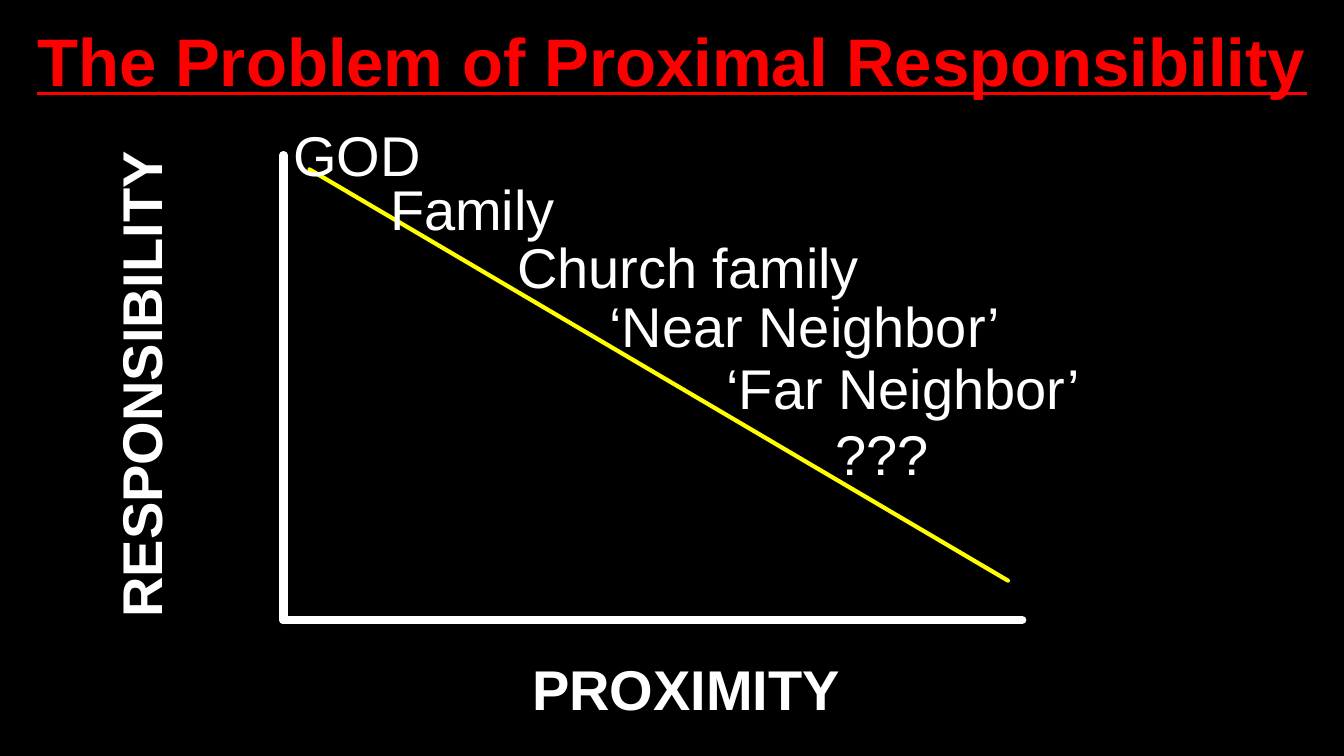
from dataclasses import dataclass

from lxml import etree
from pptx import Presentation
from pptx.dml.color import RGBColor
from pptx.enum.shapes import MSO_CONNECTOR
from pptx.enum.text import MSO_AUTO_SIZE, PP_ALIGN
from pptx.oxml.ns import qn
from pptx.slide import Slide
from pptx.util import Cm, Pt

STRAIGHT = MSO_CONNECTOR.STRAIGHT
GROW = MSO_AUTO_SIZE.SHAPE_TO_FIT_TEXT
LEFT = PP_ALIGN.LEFT
CENTER = PP_ALIGN.CENTER

BLACK = RGBColor(0, 0, 0)
WHITE = RGBColor(255, 255, 255)
RED = RGBColor(255, 0, 0)
YELLOW = RGBColor(255, 255, 0)

WIDTH, HEIGHT = 33.87, 19.05
AXIS_X, AXIS_Y = 7.14, 15.62


@dataclass
class Label:
    text: str
    left: float
    top: float
    width: float
    height: float = 1.96
    size: int = 40
    color: RGBColor = WHITE
    bold: bool = False
    under: bool = False
    align: PP_ALIGN = LEFT
    turn: int = 0


@dataclass
class Line:
    x1: float
    y1: float
    x2: float
    y2: float
    color: RGBColor = WHITE
    weight: int = 6


LINES = [
    Line(AXIS_X, 3.91, AXIS_X, AXIS_Y),
    Line(25.76, AXIS_Y, AXIS_X, AXIS_Y),
    Line(7.8, 4.27, 25.4, 14.63, YELLOW, 3),
]

LABELS = [
    Label("The Problem of Proximal Responsibility", 0, 0.36, WIDTH, 2.31,
          size=48, color=RED, bold=True, under=True, align=CENTER),
    Label("RESPONSIBILITY", -2.77, 8.53, 12.6, bold=True, turn=270),
    Label("PROXIMITY", 13.16, 16.36, 12.6, bold=True),
    Label("GOD", AXIS_X, 2.92, 4.17),
    Label("Family", 9.58, 4.27, 4.7),
    Label("Church family", 12.78, 5.74, 9.6),
    Label("‘Near Neighbor’", 15.11, 7.21, 11.35),
    Label("‘Far Neighbor’", 18.06, 8.79, 11.35),
    Label("???", 20.8, 10.44, 11.35),
]


def draw_line(slide: Slide, line: Line) -> None:
    shape = slide.shapes.add_connector(
        STRAIGHT, Cm(line.x1), Cm(line.y1), Cm(line.x2), Cm(line.y2))
    shape.line.color.rgb = line.color
    shape.line.width = Pt(line.weight)
    props = shape.element.spPr
    props.find(qn("a:ln")).set("cap", "rnd")
    etree.SubElement(props, qn("a:effectLst"))


def draw_label(slide: Slide, label: Label) -> None:
    box = slide.shapes.add_textbox(
        Cm(label.left), Cm(label.top), Cm(label.width), Cm(label.height))
    box.rotation = label.turn
    frame = box.text_frame
    frame.word_wrap = True
    frame.auto_size = GROW
    frame.text = label.text
    para = frame.paragraphs[0]
    para.alignment = label.align
    font = para.runs[0].font
    font.name = "Arial"
    font.size = Pt(label.size)
    font.bold = label.bold
    font.underline = label.under
    font.color.rgb = label.color


def main() -> None:
    deck = Presentation()
    deck.slide_width = Cm(WIDTH)
    deck.slide_height = Cm(HEIGHT)
    slide = deck.slides.add_slide(deck.slide_layouts[6])
    fill = slide.background.fill
    fill.solid()
    fill.fore_color.rgb = BLACK
    for line in LINES:
        draw_line(slide, line)
    for label in LABELS:
        draw_label(slide, label)
    deck.save("out.pptx")


if __name__ == "__main__":
    main()
